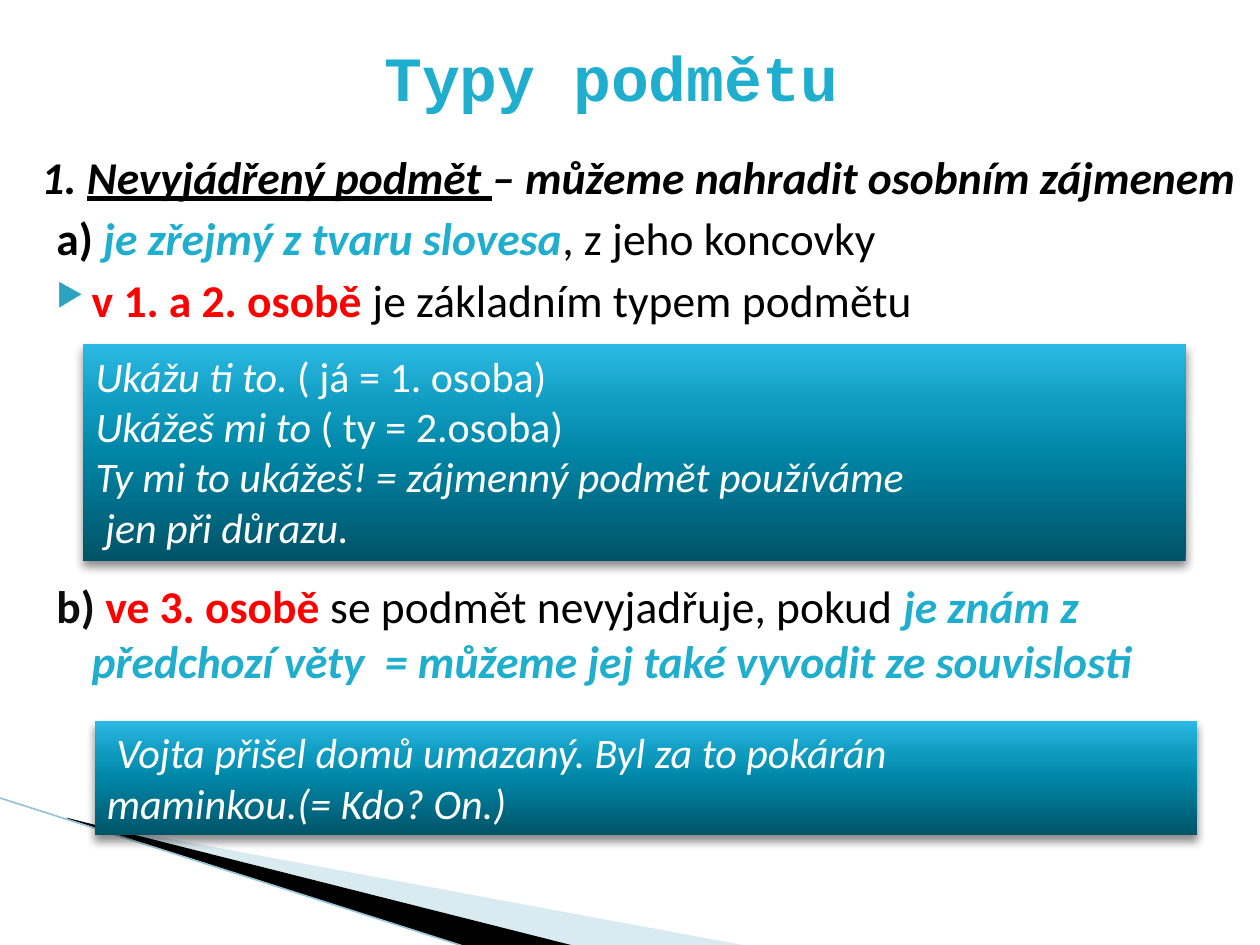
from dataclasses import dataclass

import lxml.etree
import pptx
import pptx.dml.color
import pptx.enum.dml
import pptx.enum.shapes
import pptx.enum.text
import pptx.oxml
import pptx.oxml.ns
import pptx.util

Inches = pptx.util.Inches
Pt = pptx.util.Pt
ALIGN = pptx.enum.text.PP_ALIGN
ANCHOR = pptx.enum.text.MSO_ANCHOR
NS = pptx.oxml.ns.nsdecls("a")

TEAL, RED, BLACK, WHITE = "1FAECD", "FF0000", "000000", "FFFFFF"
GRADIENT = [(0, "005367"), (50, "0086A7"), (70, "0E9ABE"), (100, "2CB9E3")]


@dataclass
class Run:
    text: str
    color: str = BLACK
    bold: bool = False
    italic: bool = False
    underline: bool = False


@dataclass
class Para:
    runs: list[Run]
    left: float = 0.4
    indent: float = -0.28
    bullet: bool = False


@dataclass
class Example:
    left: float
    top: float
    height: float
    lines: list[list[Run]]


@dataclass
class Wedge:
    points: list[tuple[float, float]]
    color: str
    alpha: int = 100


def rgb(color: str) -> pptx.dml.color.RGBColor:
    return pptx.dml.color.RGBColor.from_string(color)


def add_runs(p, runs: list[Run], size: int) -> None:
    for run in runs:
        r = p.add_run()
        r.text = run.text
        r.font.name = "Calibri"
        r.font.size = Pt(size)
        r.font.color.rgb = rgb(run.color)
        r.font.bold = run.bold
        r.font.italic = run.italic
        r.font.underline = run.underline


def add_bullet(p) -> None:
    pPr = p._p.get_or_add_pPr()
    for xml in (
        f'<a:buClr {NS}><a:srgbClr val="2DA2BF"/></a:buClr>',
        f'<a:buSzPct {NS} val="68000"/>',
        f'<a:buChar {NS} char="▶"/>',
    ):
        pPr.append(pptx.oxml.parse_xml(xml))


def add_body(s, top: float, height: float, paras: list[Para]) -> None:
    sp = s.shapes.add_textbox(Inches(0.23), Inches(top), Inches(9.77), Inches(height))
    tf = sp.text_frame
    tf.word_wrap = True
    for i, para in enumerate(paras):
        p = tf.add_paragraph() if i else tf.paragraphs[0]
        if i:
            p.space_before = Pt(4)
        pPr = p._p.get_or_add_pPr()
        pPr.set("marL", str(Inches(para.left)))
        pPr.set("indent", str(Inches(para.indent)))
        if para.bullet:
            add_bullet(p)
        add_runs(p, para.runs, 26)


def add_example(s, example: Example) -> None:
    sp = s.shapes.add_shape(
        pptx.enum.shapes.MSO_SHAPE.RECTANGLE,
        Inches(example.left), Inches(example.top), Inches(8.75), Inches(example.height),
    )
    sp.line.fill.background()
    stops = "".join(
        f'<a:gs pos="{pos * 1000}"><a:srgbClr val="{color}"/></a:gs>' for pos, color in GRADIENT
    )
    sp._element.spPr.find(pptx.oxml.ns.qn("a:ln")).addprevious(pptx.oxml.parse_xml(
        f'<a:gradFill {NS} rotWithShape="1"><a:gsLst>{stops}</a:gsLst>'
        '<a:lin ang="16200000" scaled="0"/></a:gradFill>'
    ))
    sp._element.spPr.append(pptx.oxml.parse_xml(
        f'<a:effectLst {NS}><a:outerShdw blurRad="{Pt(5)}" dist="{Pt(3)}" dir="5400000" '
        'rotWithShape="0"><a:srgbClr val="000000"><a:alpha val="45000"/></a:srgbClr>'
        '</a:outerShdw></a:effectLst>'
    ))
    tf = sp.text_frame
    tf.word_wrap = True
    tf.vertical_anchor = ANCHOR.TOP
    for i, line in enumerate(example.lines):
        p = tf.add_paragraph() if i else tf.paragraphs[0]
        p.alignment = ALIGN.LEFT
        add_runs(p, line, 24)


def add_wedge(s, wedge: Wedge) -> None:
    points = [(Inches(x), Inches(y)) for x, y in wedge.points]
    fb = s.shapes.build_freeform(*points[0])
    fb.add_line_segments(points[1:], close=True)
    sp = fb.convert_to_shape()
    sp.shadow.inherit = False
    sp.line.fill.background()
    sp.fill.solid()
    sp.fill.fore_color.rgb = rgb(wedge.color)
    if wedge.alpha < 100:
        clr = sp._element.spPr.find(".//" + pptx.oxml.ns.qn("a:srgbClr"))
        alpha = lxml.etree.SubElement(clr, pptx.oxml.ns.qn("a:alpha"))
        alpha.set("val", str(wedge.alpha * 1000))


def add_edge(s) -> None:
    line = s.shapes.add_connector(
        pptx.enum.shapes.MSO_CONNECTOR.STRAIGHT,
        Inches(-0.01), Inches(6.33), Inches(3.71), Inches(7.52),
    )
    line.line.color.rgb = rgb("97C5D8")
    line.line.width = Pt(0.95)
    line._element.spPr.append(pptx.oxml.parse_xml(f"<a:effectLst {NS}/>"))


def set_title(s, text: str) -> None:
    sp = s.shapes.title
    sp.left, sp.top, sp.width, sp.height = Inches(0.35), Inches(-0.02), Inches(9), Inches(1.25)
    tf = sp.text_frame
    tf.text = text
    tf.vertical_anchor = ANCHOR.MIDDLE
    p = tf.paragraphs[0]
    p.alignment = ALIGN.CENTER
    r = p.runs[0]
    r.font.name = "Courier New"
    r.font.size = Pt(36)
    r.font.bold = True
    r.font.color.rgb = rgb(TEAL)


WEDGES = [
    Wedge([(0.55, 6.51), (5.95, 7.51), (4.56, 7.51), (0.55, 6.5)], "A0CBDC", 40),
    Wedge([(0.53, 6.49), (4.57, 7.51), (3.72, 7.52), (0.54, 6.5)], BLACK),
]
UNEXPRESSED = [
    Para([
        Run("1. ", bold=True, italic=True),
        Run("Nevyjádřený podmět ", bold=True, italic=True, underline=True),
        Run("– můžeme nahradit osobním zájmenem", bold=True, italic=True),
    ], 0.56, -0.56),
    Para([
        Run("a) ", bold=True),
        Run("je zřejmý z tvaru slovesa", TEAL, True, True),
        Run(", z jeho koncovky"),
    ]),
    Para([Run("v 1. a 2. osobě ", RED, True), Run("je základním typem podmětu")], bullet=True),
]
THIRD_PERSON = [
    Para([
        Run("b) ", "0D0D0D", True),
        Run("ve 3. osobě ", RED, True),
        Run("se podmět nevyjadřuje, pokud "),
        Run("je znám z předchozí věty  = můžeme jej také vyvodit ze souvislosti", TEAL, True, True),
    ]),
]
EXAMPLES = [
    Example(0.66, 2.73, 1.72, [
        [Run("Ukážu ti to. ", WHITE, italic=True), Run("( já = 1. osoba)", WHITE)],
        [Run("Ukážeš mi to ", WHITE, italic=True), Run("( ty = 2.osoba)", WHITE)],
        [Run("Ty mi to ukážeš! = zájmenný podmět používáme", WHITE, italic=True)],
        [Run(" jen při důrazu.", WHITE, italic=True)],
    ]),
    Example(0.75, 5.72, 0.91, [
        [Run(" Vojta přišel domů umazaný. Byl za to pokárán", WHITE, italic=True)],
        [Run("maminkou.(= Kdo? On.)", WHITE, italic=True)],
    ]),
]

prs = pptx.Presentation()
prs.slide_width, prs.slide_height = Inches(10), Inches(7.5)
s = prs.slides.add_slide(prs.slide_layouts[5])
for wedge in WEDGES:
    add_wedge(s, wedge)
add_edge(s)
add_body(s, 1.13, 1.55, UNEXPRESSED)
add_body(s, 4.54, 1, THIRD_PERSON)
set_title(s, "Typy podmětu")
for example in EXAMPLES:
    add_example(s, example)
prs.save("out.pptx")
